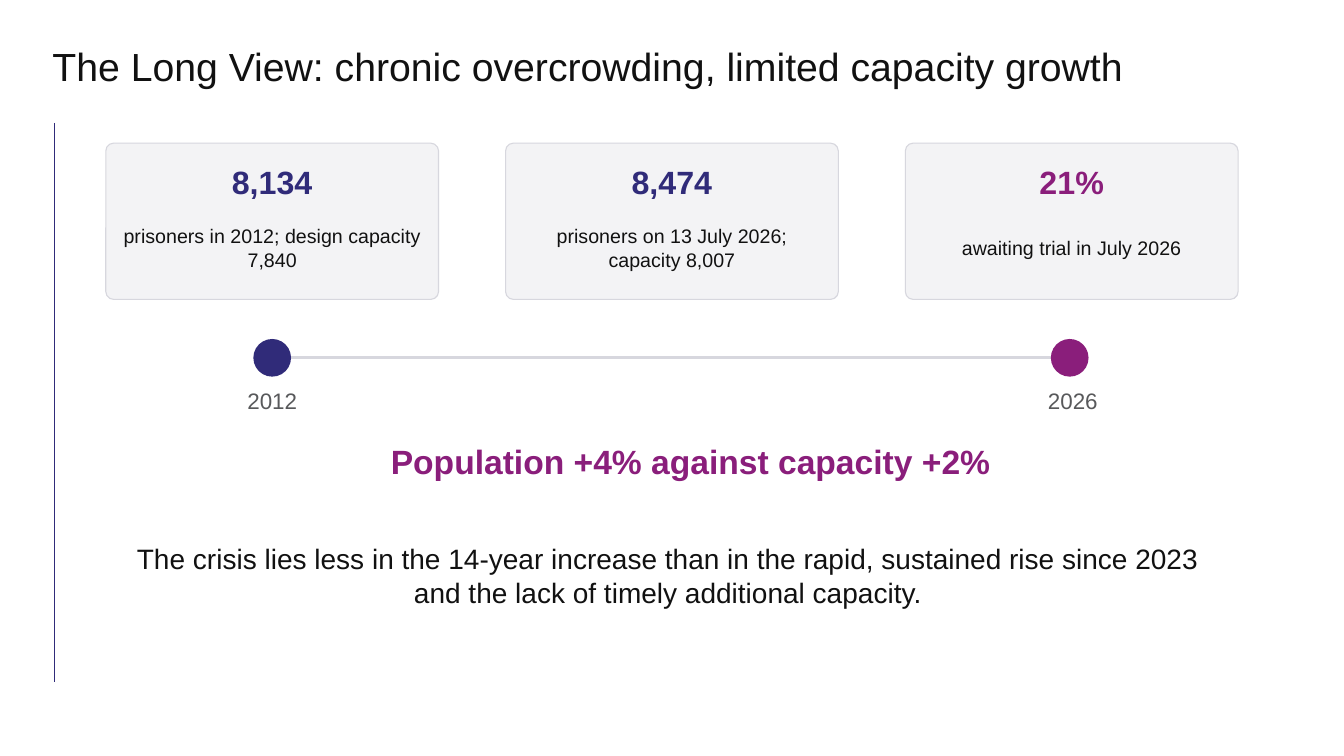
from lxml import etree
from pptx import Presentation
from pptx import util as u
from pptx.dml.color import RGBColor
from pptx.enum import shapes, text
from pptx.oxml import ns

PX = 9144  # EMU per px, 100 px to the inch
FONT = "Arial"
INK = RGBColor(0x11, 0x11, 0x11)
INDIGO = RGBColor(0x30, 0x2B, 0x79)
PLUM = RGBColor(0x8A, 0x1E, 0x7B)
GREY = RGBColor(0x58, 0x59, 0x5B)
PANEL = RGBColor(0xF3, 0xF3, 0xF5)
RULE = RGBColor(0xD7, 0xD7, 0xDE)

FIGURES = [
    ("8,134", "prisoners in 2012; design capacity 7,840", INDIGO),
    ("8,474", "prisoners on 13 July 2026; capacity 8,007", INDIGO),
    ("21%", "awaiting trial in July 2026", PLUM),
]
# year, dot left and label left within the timeline, colour
MILESTONES = [("2012", 32, 0, INDIGO), ("2026", 823, 794, PLUM)]


def emu(*lengths):
    return [round(length * PX) for length in lengths]


def write(frame, words, size, color, bold=False, align=text.PP_ALIGN.CENTER):
    frame_format = dict(
        margin_left=0, margin_top=0, margin_right=0, margin_bottom=0,
        word_wrap=True, auto_size=text.MSO_AUTO_SIZE.NONE,
        vertical_anchor=text.MSO_ANCHOR.MIDDLE)
    for name, value in frame_format.items():
        setattr(frame, name, value)
    frame.text = words
    paragraph = frame.paragraphs[0]
    paragraph.alignment = align
    for name, value in dict(name=FONT, size=u.Pt(size), bold=bold).items():
        setattr(paragraph.font, name, value)
    paragraph.font.color.rgb = color


def add_label(slide, box, words, size, color, bold=False):
    label = slide.shapes.add_textbox(*emu(*box))
    write(label.text_frame, words, size, color, bold)


def add_filled(slide, preset, box, fill, line, width):
    filled = slide.shapes.add_shape(preset, *emu(*box))
    filled.shadow.inherit = False
    filled.fill.solid()
    filled.fill.fore_color.rgb = fill
    filled.line.color.rgb = line
    filled.line.width = u.Pt(width)
    return filled


def add_line(slide, start, end, color, width, arrow=False):
    line = slide.shapes.add_connector(
        shapes.MSO_CONNECTOR.STRAIGHT, *emu(*start, *end))
    line.line.color.rgb = color
    line.line.width = u.Pt(width)
    if arrow:
        stroke = line.line._get_or_add_ln()
        etree.SubElement(stroke, ns.qn("a:tailEnd"), type="triangle")
    etree.SubElement(line._element.spPr, ns.qn("a:effectLst"))


def add_title(slide, box):
    title = slide.shapes.title
    title.left, title.top, title.width, title.height = emu(*box)
    write(title.text_frame,
          "The Long View: chronic overcrowding, limited capacity growth",
          28, INK, align=text.PP_ALIGN.LEFT)


def add_card(slide, box, figure, caption, color):
    left, top, width, _ = box
    card = add_filled(slide, shapes.MSO_SHAPE.ROUNDED_RECTANGLE, box,
                      PANEL, RULE, 0.8)
    card.adjustments[0] = 0.05
    inner = width - 30
    add_label(slide, (left + 15, top + 13, inner, 50), figure, 23, color, True)
    add_label(slide, (left + 15, top + 72, inner, 63), caption, 14, INK)


def add_cards(slide, box):
    left, top, width, height = box
    card_width = 330
    step = (width - card_width) / (len(FIGURES) - 1)
    for i, figure in enumerate(FIGURES):
        add_card(slide, (left + i * step, top, card_width, height), *figure)


def add_timeline(slide, box):
    left, top, _, height = box
    dot, label_height = 36, 28
    axis = top + dot // 2
    add_line(slide, (left + 55, axis), (left + 845, axis), RULE, 2, arrow=True)
    for year, dot_left, label_left, color in MILESTONES:
        add_filled(slide, shapes.MSO_SHAPE.OVAL,
                   (left + dot_left, top, dot, dot), color, color, 1)
        add_label(slide, (left + label_left, top + height - label_height,
                          100, label_height), year, 16, GREY)


def main():
    deck = Presentation()
    deck.slide_width, deck.slide_height = emu(1333, 750)
    slide = deck.slides.add_slide(deck.slide_layouts[5])
    add_title(slide, (52, 38, 1190, 55))
    add_line(slide, (54, 122), (54, 677), INDIGO, 1.2)
    add_cards(slide, (105, 142, 1123, 155))
    add_timeline(slide, (220, 337, 894, 74))
    add_label(slide, (365, 430, 640, 55),
              "Population +4% against capacity +2%", 24, PLUM, True)
    add_label(slide, (135, 535, 1055, 72),
              "The crisis lies less in the 14-year increase than in the rapid, "
              "sustained rise since 2023 and the lack of timely additional "
              "capacity.", 20, INK)
    deck.save("out.pptx")


if __name__ == "__main__":
    main()
